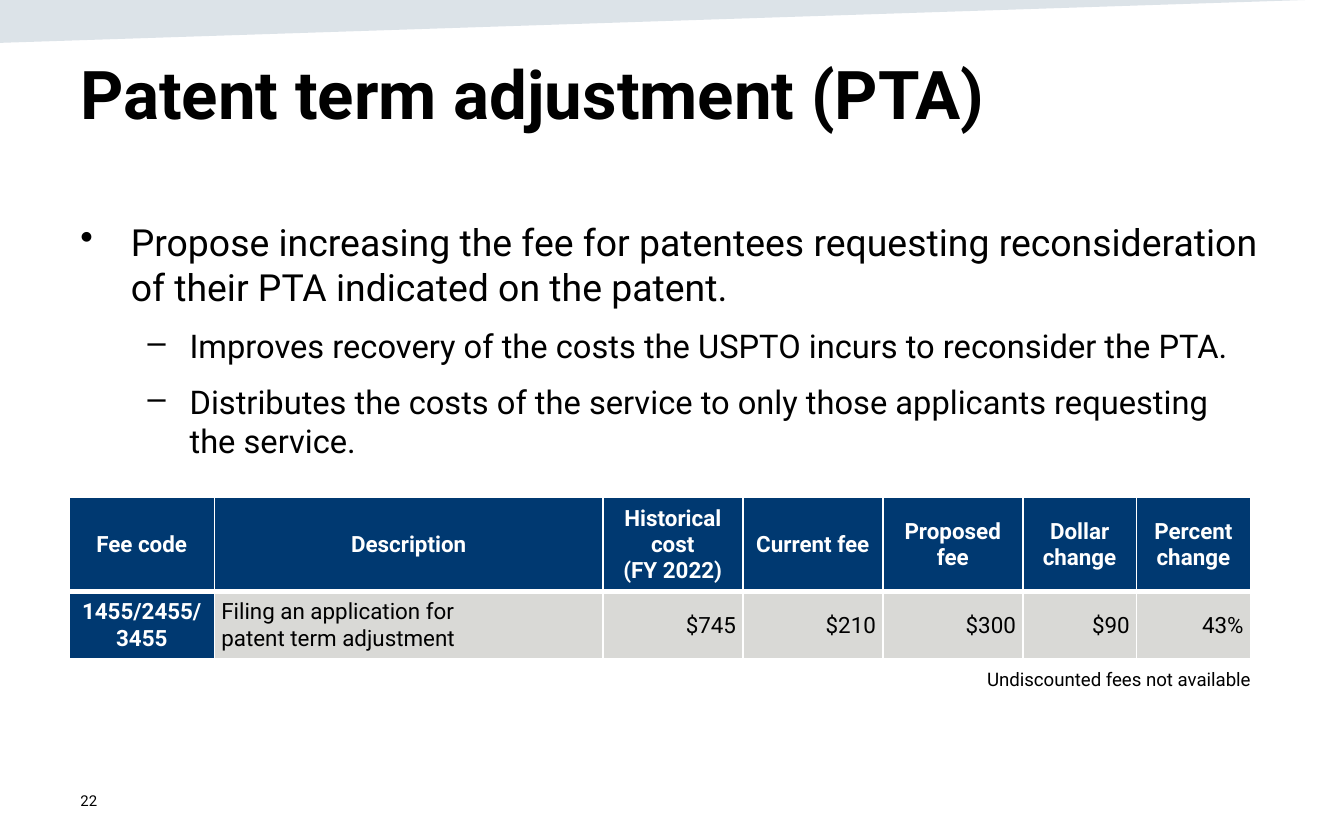
from dataclasses import dataclass

from lxml import etree
from pptx import Presentation
from pptx import util as u
from pptx.dml.color import RGBColor
from pptx.enum import text
from pptx.oxml import ns

Pt = u.Pt
ALIGN = text.PP_ALIGN


@dataclass(frozen=True)
class Theme:
    font: str = "Roboto"
    ink: str = "000000"
    white: str = "FFFFFF"
    band: str = "164469"
    navy: str = "003971"
    grey: str = "D9D9D6"
    title: float = 36
    point: float = 20
    subpoint: float = 17.5
    table: float = 12
    note: float = 10
    number: float = 8


class Deck:
    def __init__(self, theme, width, height):
        self.theme = theme
        self.prs = Presentation()
        self.prs.slide_width, self.prs.slide_height = Pt(width), Pt(height)
        self.slide = self.prs.slides.add_slide(self.prs.slide_layouts[6])

    def add_words(self, paragraph, words, size, color=None, bold=False, align=ALIGN.LEFT):
        paragraph.alignment = align
        run = paragraph.add_run()
        run.text = words
        run.font.name, run.font.size, run.font.bold = self.theme.font, Pt(size), bold
        run.font.color.rgb = RGBColor.from_string(color or self.theme.ink)

    def frame(self, left, top, width, height, anchor=text.MSO_ANCHOR.TOP):
        frame = self.slide.shapes.add_textbox(Pt(left), Pt(top), Pt(width), Pt(height)).text_frame
        frame.word_wrap = True
        frame.vertical_anchor = anchor
        return frame

    def label(self, box, words, size, anchor=text.MSO_ANCHOR.TOP, **style):
        self.add_words(self.frame(*box, anchor).paragraphs[0], words, size, **style)

    def bullets(self, box, items):
        frame = self.frame(*box)
        # Mark, left margin, hanging indent and type size of each level
        levels = [("•", 27, 27, self.theme.point), ("–", 58.5, 22.5, self.theme.subpoint)]
        for index, (level, words) in enumerate(items):
            paragraph = frame.add_paragraph() if index else frame.paragraphs[0]
            mark, margin, hang, size = levels[level]
            paragraph.level = level
            paragraph.space_before = Pt(9)
            self.add_words(paragraph, words, size)
            props = paragraph._p.get_or_add_pPr()
            props.set("marL", str(Pt(margin)))
            props.set("indent", str(-Pt(hang)))
            etree.SubElement(props, ns.qn("a:buChar"), char=mark)

    def polygon(self, points, color, opacity):
        start, *rest = [(Pt(x), Pt(y)) for x, y in points]
        builder = self.slide.shapes.build_freeform(*start)
        builder.add_line_segments(rest, close=True)
        shape = builder.convert_to_shape()
        shape.shadow.inherit = False
        shape.line.fill.background()
        shape.fill.solid()
        shape.fill.fore_color.rgb = RGBColor.from_string(color)
        tint = shape._element.spPr.find(".//" + ns.qn("a:srgbClr"))
        etree.SubElement(tint, ns.qn("a:alpha"), val=str(opacity * 1000))

    def borders(self, cell, **widths):
        props = cell._tc.get_or_add_tcPr()
        for side in "LRTB":
            line = etree.SubElement(props, ns.qn("a:ln" + side), w=str(Pt(widths.get(side, 1))))
            fill = etree.SubElement(line, ns.qn("a:solidFill"))
            etree.SubElement(fill, ns.qn("a:srgbClr"), val=self.theme.white)

    def table(self, left, top, widths, heights, rows):
        theme = self.theme
        table = self.slide.shapes.add_table(
            len(rows), len(widths), Pt(left), Pt(top), Pt(sum(widths)), Pt(sum(heights))).table
        for column, width in zip(table.columns, widths):
            column.width = Pt(width)
        for r, (row, height) in enumerate(zip(rows, heights)):
            table.rows[r].height = Pt(height)
            for c, words in enumerate(row):
                cell = table.cell(r, c)
                heading = r == 0 or c == 0
                align = ALIGN.CENTER if heading else ALIGN.LEFT if c == 1 else ALIGN.RIGHT
                # Thick rule under the header row
                self.borders(cell, **({"T": 3} if r else {"B": 3}))
                cell.fill.solid()
                cell.fill.fore_color.rgb = RGBColor.from_string(theme.navy if heading else theme.grey)
                cell.vertical_anchor = text.MSO_ANCHOR.MIDDLE
                cell.margin_left = cell.margin_right = Pt(3.6)
                cell.margin_top = cell.margin_bottom = Pt(3.6)
                frame = cell.text_frame
                for i, line in enumerate(words.split("\n")):
                    paragraph = frame.add_paragraph() if i else frame.paragraphs[0]
                    self.add_words(paragraph, line, theme.table,
                                   theme.white if heading else theme.ink, heading, align)


def main():
    theme = Theme()
    deck = Deck(theme, 720, 450)

    # Slanted band along the top edge
    deck.polygon([(0, 0), (0, 23), (721.5, -0.7)], theme.band, 15)

    # Slide number and title
    deck.label((36, 417, 162, 24), "22", theme.number, anchor=text.MSO_ANCHOR.MIDDLE)
    deck.label((36, 24.5, 648, 75), "Patent term adjustment (PTA)", theme.title, bold=True)

    # Proposal and its reasons
    deck.bullets((36, 114, 648, 157), [
        (0, "Propose increasing the fee for patentees requesting reconsideration "
            "of their PTA indicated on the patent."),
        (1, "Improves recovery of the costs the USPTO incurs to reconsider the PTA."),
        (1, "Distributes the costs of the service to only those applicants "
            "requesting the service."),
    ])

    # Fee table
    deck.table(37, 266.5, [78, 208, 75, 75, 75, 61, 61], [44, 30], [
        ["Fee code", "Description", "Historical cost\n(FY 2022)", "Current fee",
         "Proposed fee", "Dollar change", "Percent change"],
        ["1455/2455/3455", "Filing an application for\npatent term adjustment",
         "$745", "$210", "$300", "$90", "43%"],
    ])

    # Footnote
    deck.label((16, 354, 661, 19.5), "Undiscounted fees not available", theme.note,
               align=ALIGN.RIGHT)

    deck.prs.save("out.pptx")


if __name__ == "__main__":
    main()
